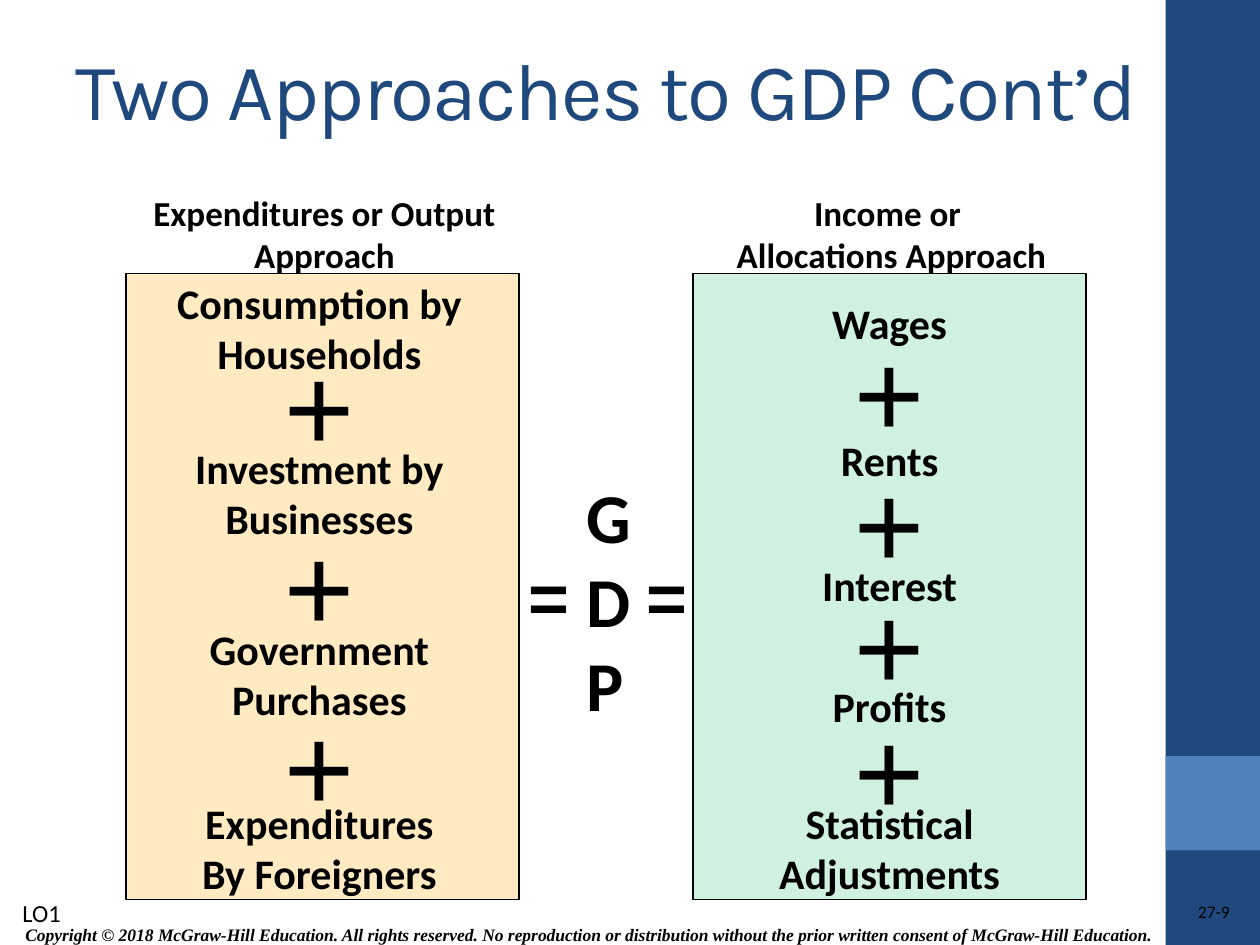
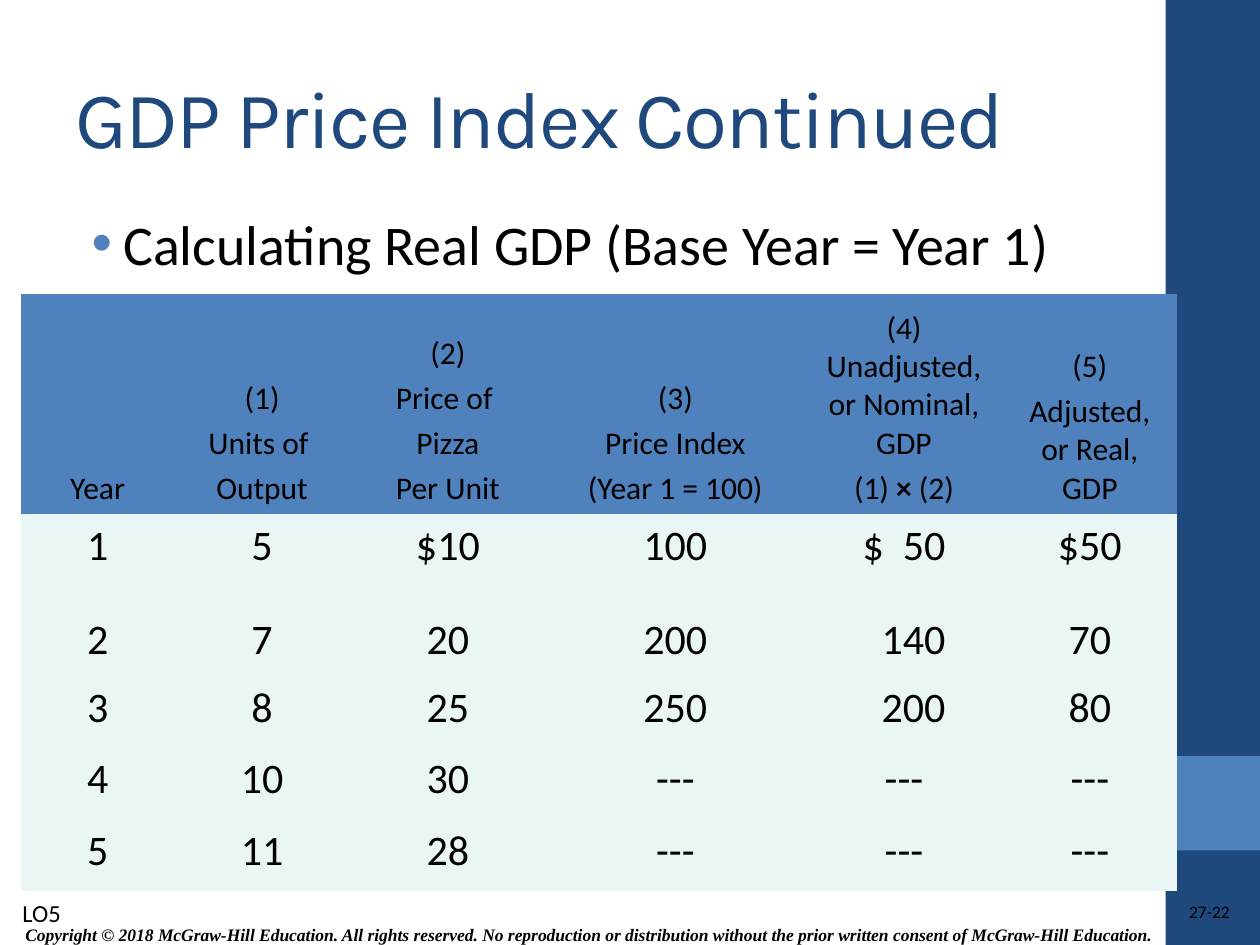
from dataclasses import dataclass

from lxml import etree
from pptx import Presentation
from pptx import util as u
from pptx.dml import color
from pptx.enum import shapes, text
from pptx.oxml import ns

COLUMNS, ROWS = 100, 75
UNIT = u.Inches(0.1)
NAVY, BLUE, BLACK = "1F497D", "4F81BD", "000000"
CREAM, MINT, ICE = "FFEAC1", "D0F0E0", "EAF5F6"
PLAIN_TABLE = "{2D5ABB26-0587-4C30-8999-92F81FD0307C}"
LEFT, CENTER, RIGHT = text.PP_ALIGN.LEFT, text.PP_ALIGN.CENTER, text.PP_ALIGN.RIGHT
TOP, MIDDLE, BOTTOM = (text.MSO_ANCHOR.TOP, text.MSO_ANCHOR.MIDDLE,
                       text.MSO_ANCHOR.BOTTOM)

TITLE = dict(name="Karla", size=46, color=NAVY, spacing=-1)
BODY = dict(name="Calibri", size=32)
HEADING = dict(name="Calibri", size=20, bold=True)
TERM = dict(name="Calibri", size=24, bold=True)
PLUS = dict(name="Times New Roman", size=72, bold=True)
LETTERS = dict(name="Calibri", size=40, bold=True)
EQUALS = dict(name="Arial", size=40, bold=True)
OBJECTIVE = dict(name="Calibri", size=14)
NUMBER = dict(name="Calibri", size=10)
COPYRIGHT = dict(name="Times New Roman", size=10, bold=True, italic=True)
TABLE_HEAD = dict(name="Calibri", size=18)
TABLE_BODY = dict(name="Calibri", size=24)

COPYRIGHT_LINE = ("Copyright © 2018 McGraw-Hill Education. All rights reserved. "
                  "No reproduction or distribution without the prior written "
                  "consent of McGraw-Hill Education.")

EXPENDITURES = dict(
    heading=["Expenditures or Output Approach"],
    fill=CREAM,
    text_width=30.7,
    terms=[(-0.2, ["Consumption by", "Households"]),
           (12.9, ["Investment by", "Businesses"]),
           (27.3, ["Government", "Purchases"]),
           (41.1, ["Expenditures", "By Foreigners"])],
    pluses=[3.8 + 14.3 * step for step in range(3)])
INCOME = dict(
    heading=["Income or ", "Allocations Approach"],
    fill=MINT,
    text_width=31.2,
    terms=[(1.4, ["Wages"]), (12.3, ["Rents"]), (22.2, ["Interest"]),
           (31.8, ["Profits"]), (41.1, ["Statistical", "Adjustments"])],
    pluses=[2.7, 13.1, 22.8, 32.7])

COLUMN_WIDTHS = [12.1, 14, 15.5, 20.6, 15.7, 13.8]
ROW_HEIGHTS = [17.5, 7.5, 5.4, 5.6, 5.7, 5.7]
NOMINAL_GDP = 4
HEAD_CELLS = [
    ["Year"],
    ["(1)", "Units of ", "Output"],
    ["(2)", "Price of ", "Pizza", "Per Unit"],
    ["(3)", "Price Index", "(Year 1 = 100)"],
    ["(4) Unadjusted, or Nominal, GDP",
     [("(1) ", {}), ("×", {"bold": True}), (" (2)", {})]],
    ["(5)", "Adjusted, or Real, GDP"],
]
BODY_CELLS = [
    ["1", "5", "$10", "100", [("$", {}), (" ", {"spacing": 5.4}), ("50", {})], "$50"],
    ["2", "7", "20", "200", "140", "70"],
    ["3", "8", "25", "250", "200", "80"],
    ["4", "10", "30", "---", "---", "---"],
    ["5", "11", "28", "---", "---", "---"],
]


@dataclass
class Box:
    left: float
    top: float
    width: float
    height: float

    def inner(self, left, top, width, height):
        return Box(self.left + left, self.top + top, width, height)

    def emu(self):
        return [grid(n) for n in (self.left, self.top, self.width, self.height)]


SLIDE = Box(0, 0, COLUMNS, ROWS)


def grid(count):
    return round(count * UNIT)


def rgb(value):
    return color.RGBColor.from_string(value)


def set_all(target, values):
    for name, value in values.items():
        setattr(target, name, value)


def style_span(span, style):
    values = dict(style)
    span.font.color.rgb = rgb(values.pop("color", BLACK))
    spacing = values.pop("spacing", None)
    values["size"] = u.Pt(values["size"])
    set_all(span.font, values)
    if spacing is not None:
        span._r.get_or_add_rPr().set("spc", str(round(spacing * 100)))


def write(frame, paragraphs, style, align=LEFT, gap=None):
    for index, content in enumerate(paragraphs):
        para = frame.add_paragraph() if index else frame.paragraphs[0]
        para.alignment = align
        if index and gap:
            para.space_before = u.Pt(gap)
        spans = [(content, {})] if isinstance(content, str) else content
        for words, extra in spans:
            span = para.add_run()
            span.text = words
            style_span(span, {**style, **extra})


def add_text(page, box, paragraphs, style, align=LEFT, anchor=TOP, inset=True):
    frame = page.shapes.add_textbox(*box.emu()).text_frame
    set_all(frame, dict(word_wrap=True, vertical_anchor=anchor))
    if not inset:
        set_all(frame, dict.fromkeys(
            ("margin_left", "margin_top", "margin_right", "margin_bottom"), 0))
    write(frame, paragraphs, style, align)
    return frame


def add_rectangle(page, box, fill, outlined=False):
    shape = page.shapes.add_shape(shapes.MSO_SHAPE.RECTANGLE, *box.emu())
    shape.shadow.inherit = False
    shape.fill.solid()
    shape.fill.fore_color.rgb = rgb(fill)
    if outlined:
        shape.line.color.rgb = rgb(BLACK)
        shape.line.width = u.Pt(0.75)
    else:
        shape.line.fill.background()


def add_bullet(para, mark, tint, percent):
    properties = para._p.get_or_add_pPr()
    properties.set("marL", str(grid(3.8)))
    properties.set("indent", str(grid(-2.5)))
    holder = etree.SubElement(properties, ns.qn("a:buClr"))
    etree.SubElement(holder, ns.qn("a:srgbClr"), val=tint)
    etree.SubElement(properties, ns.qn("a:buSzPct"), val=str(percent * 1000))
    etree.SubElement(properties, ns.qn("a:buFont"), typeface="Arial")
    etree.SubElement(properties, ns.qn("a:buChar"), char=mark)


def add_page(deck, title, title_box, number, objective):
    page = deck.slides.add_slide(deck.slide_layouts[6])
    band = SLIDE.inner(92.5, 0, 7.5, ROWS)
    add_rectangle(page, band, NAVY)
    add_rectangle(page, band.inner(0, 60, 7.5, 7.5), BLUE)
    add_text(page, SLIDE.inner(0.6, 72.8, 92.2, 2.8), [COPYRIGHT_LINE], COPYRIGHT,
             CENTER, MIDDLE)
    add_text(page, SLIDE.inner(78.1, 71.5, 19.5, 2), [number], NUMBER, RIGHT,
             inset=False)
    add_text(page, title_box, [title], TITLE, anchor=MIDDLE)
    add_text(page, SLIDE.inner(0.8, 70.8, 5.3, 3.4), [objective], OBJECTIVE)
    return page


def add_approach(page, panel, heading, fill, text_width, terms, pluses):
    add_rectangle(page, panel, fill, outlined=True)
    add_text(page, panel.inner(0, -7, 31.5, 7.7), heading, HEADING, CENTER)
    for top in pluses:
        add_text(page, panel.inner(0, top, text_width, 13), ["+"], PLUS, CENTER)
    for top, lines in terms:
        add_text(page, panel.inner(0, top, text_width, 4.5 * len(lines)), lines,
                 TERM, CENTER)


def add_identity(page, box):
    add_text(page, box.inner(4.6, 0, 7, 21), list("GDP"), LETTERS)
    for left in (0, 9.3):
        add_text(page, box.inner(left, 6.3, 6, 7.7), ["="], EQUALS)


def add_index_table(page, box):
    table = page.shapes.add_table(len(ROW_HEIGHTS), len(COLUMN_WIDTHS),
                                  *box.emu()).table
    set_all(table, dict(first_row=False, horz_banding=False))
    table._tbl.tblPr.find(ns.qn("a:tableStyleId")).text = PLAIN_TABLE
    for column, width in zip(table.columns, COLUMN_WIDTHS):
        column.width = grid(width)
    for row, height in zip(table.rows, ROW_HEIGHTS):
        row.height = grid(height)
    body = [[[value] for value in values] for values in BODY_CELLS]
    for row_index, values in enumerate([HEAD_CELLS] + body):
        head = row_index == 0
        for column_index, paragraphs in enumerate(values):
            cell = table.cell(row_index, column_index)
            cell.fill.solid()
            cell.fill.fore_color.rgb = rgb(BLUE if head else ICE)
            cell.vertical_anchor = BOTTOM if head else TOP
            if column_index == NOMINAL_GDP and paragraphs[0] in ("140", "200"):
                cell.margin_left = grid(2.5)
            write(cell.text_frame, paragraphs, TABLE_HEAD if head else TABLE_BODY,
                  CENTER, gap=3.7)


def build_approaches(deck):
    page = add_page(deck, "Two Approaches to GDP Cont’d",
                    SLIDE.inner(5, 0, 86.7, 14), "27-9", "LO1")
    for left, approach in ((10, EXPENDITURES), (55, INCOME)):
        add_approach(page, SLIDE.inner(left, 21.7, 31.2, 49.7), **approach)
    add_identity(page, SLIDE.inner(41, 37.1, 15, 21))


def build_price_index(deck):
    page = add_page(deck, "GDP Price Index Continued",
                    SLIDE.inner(5, 3, 83.3, 12.5), "27-22", "LO5")
    frame = add_text(page, SLIDE.inner(5, 16.1, 83.3, 9.5),
                     ["Calculating Real GDP (Base Year = Year 1)"], BODY)
    add_bullet(frame.paragraphs[0], "•", BLUE, 104)
    add_index_table(page, SLIDE.inner(1.7, 23.3, sum(COLUMN_WIDTHS),
                                      sum(ROW_HEIGHTS)))


def main():
    deck = Presentation()
    set_all(deck, dict(slide_width=grid(COLUMNS), slide_height=grid(ROWS)))
    build_approaches(deck)
    build_price_index(deck)
    deck.save("out.pptx")


if __name__ == "__main__":
    main()
